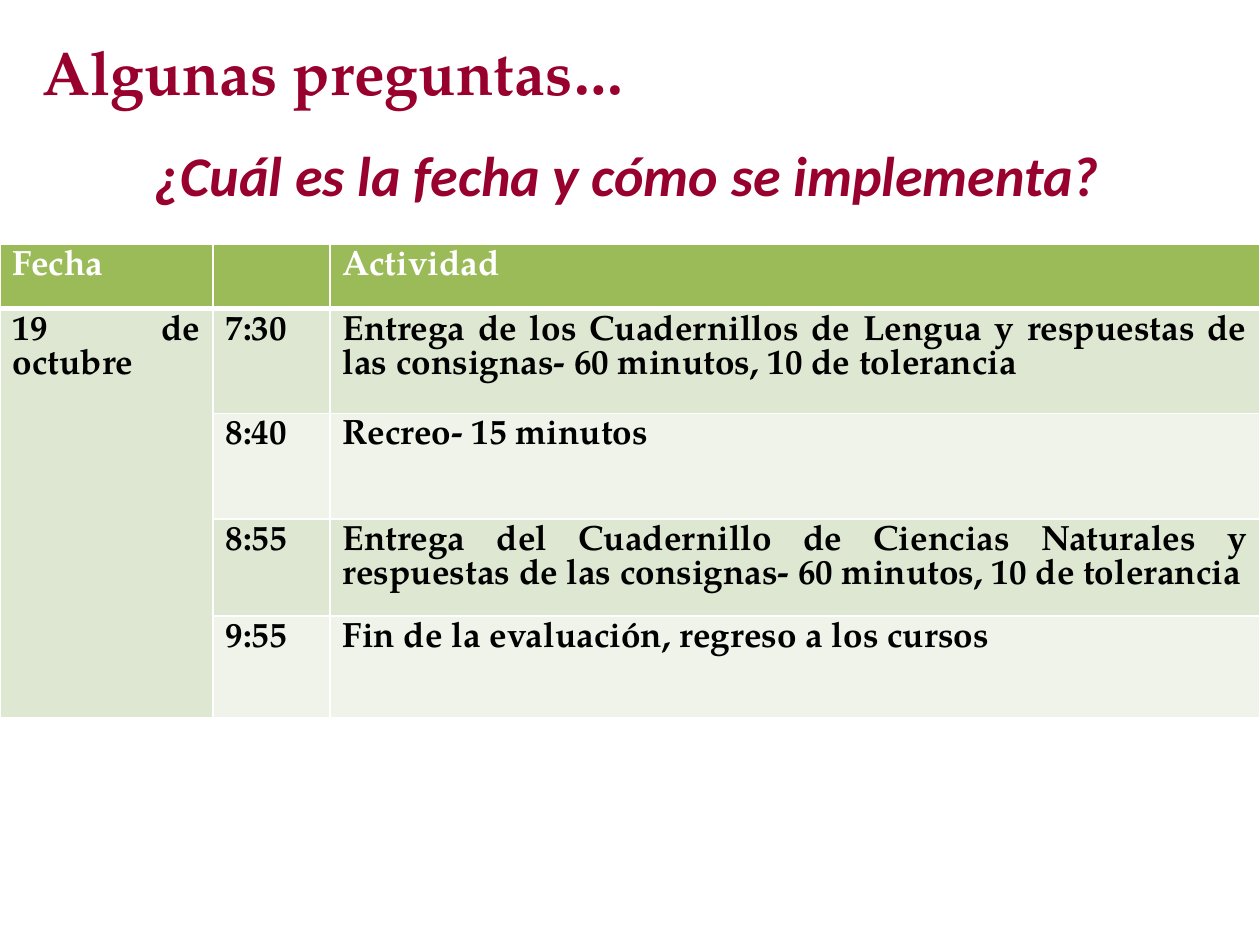
from dataclasses import dataclass

from lxml import etree
from pptx import Presentation
from pptx.dml.color import RGBColor
from pptx.enum.text import MSO_ANCHOR, PP_ALIGN
from pptx.oxml.ns import qn
from pptx.util import Inches, Pt

LEFT, CENTER, JUSTIFY = PP_ALIGN.LEFT, PP_ALIGN.CENTER, PP_ALIGN.JUSTIFY
TOP = MSO_ANCHOR.TOP
SERIF, SANS = "TeX Gyre Pagella", "Calibri"
CRIMSON, WHITE, BLACK = "98012E", "FFFFFF", "000000"
GREEN, BAND_DARK, BAND_LIGHT = "9BBB59", "DEE7D1", "EFF3EA"

TABLE_TOP = 1.94
COLUMNS = (1.69, 0.93, 7.38)
ROWS = (0.51, 0.83, 0.84, 0.77, 0.81)
HEADER = ("Fecha", "", "Actividad")
DATE = "19 de octubre"
SCHEDULE = (
    ("7:30", "Entrega de los Cuadernillos de Lengua y respuestas de las consignas- "
             "60 minutos, 10 de tolerancia"),
    ("8:40", "Recreo- 15 minutos"),
    ("8:55", "Entrega del Cuadernillo de Ciencias Naturales y respuestas de las "
             "consignas- 60 minutos, 10 de tolerancia"),
    ("9:55", "Fin de la evaluación, regreso a los cursos"),
)


@dataclass
class Heading:
    text: str
    box: tuple[float, float, float, float]
    size: float
    font: str
    align: PP_ALIGN
    italic: bool = False


HEADINGS = (
    Heading("Algunas preguntas…", (0.24, 0.22, 9.49, 0.69), 35, SERIF, LEFT),
    Heading("¿Cuál es la fecha y cómo se implementa?", (0.29, 1.07, 9.38, 0.7),
            32, SANS, CENTER, italic=True),
)


def rgb(color: str) -> RGBColor:
    return RGBColor.from_string(color)


def style_paragraph(p, size: float, font: str, color: str, align: PP_ALIGN,
                    italic: bool = False) -> None:
    p.alignment = align
    for r in p.runs:
        r.font.size, r.font.name = Pt(size), font
        r.font.bold, r.font.italic = True, italic
        r.font.color.rgb = rgb(color)


def add_heading(s, heading: Heading) -> None:
    tf = s.shapes.add_textbox(*map(Inches, heading.box)).text_frame
    tf.word_wrap = True
    tf.text = heading.text
    style_paragraph(tf.paragraphs[0], heading.size, heading.font, CRIMSON,
                    heading.align, heading.italic)


def add_borders(cell, bottom: float) -> None:
    """Draw white 1 pt sides, with the bottom one of the given width."""
    tc_pr = cell._tc.get_or_add_tcPr()
    widths = {"a:lnL": 1, "a:lnR": 1, "a:lnT": 1, "a:lnB": bottom}
    for i, (tag, width) in enumerate(widths.items()):
        line = etree.Element(qn(tag), w=str(Pt(width)))
        fill = etree.SubElement(line, qn("a:solidFill"))
        etree.SubElement(fill, qn("a:srgbClr"), val=WHITE)
        tc_pr.insert(i, line)


def fill_cell(cell, text: str, fill: str, color: str = BLACK, bottom: float = 1) -> None:
    cell.fill.solid()
    cell.fill.fore_color.rgb = rgb(fill)
    cell.vertical_anchor = TOP
    add_borders(cell, bottom)
    if text:
        cell.text_frame.text = text
        p = cell.text_frame.paragraphs[0]
        style_paragraph(p, 20, SERIF, color, JUSTIFY)
        p.line_spacing = Pt(19.5)


def add_schedule(s) -> None:
    table = s.shapes.add_table(
        len(ROWS), len(COLUMNS), 0, Inches(TABLE_TOP),
        Inches(sum(COLUMNS)), Inches(sum(ROWS))).table
    for column, width in zip(table.columns, COLUMNS):
        column.width = Inches(width)
    for row, height in zip(table.rows, ROWS):
        row.height = Inches(height)
    for col, text in enumerate(HEADER):
        fill_cell(table.cell(0, col), text, GREEN, WHITE, bottom=3)
    for row, (time, activity) in enumerate(SCHEDULE, start=1):
        band = BAND_DARK if row % 2 else BAND_LIGHT
        fill_cell(table.cell(row, 0), DATE if row == 1 else "", BAND_DARK)
        fill_cell(table.cell(row, 1), time, band)
        fill_cell(table.cell(row, 2), activity, band)
    table.cell(1, 0).merge(table.cell(len(SCHEDULE), 0))


def main() -> None:
    prs = Presentation()
    prs.slide_width, prs.slide_height = Inches(10), Inches(7.5)
    s = prs.slides.add_slide(prs.slide_layouts[6])
    for heading in HEADINGS:
        add_heading(s, heading)
    add_schedule(s)
    prs.save("out.pptx")


if __name__ == "__main__":
    main()
